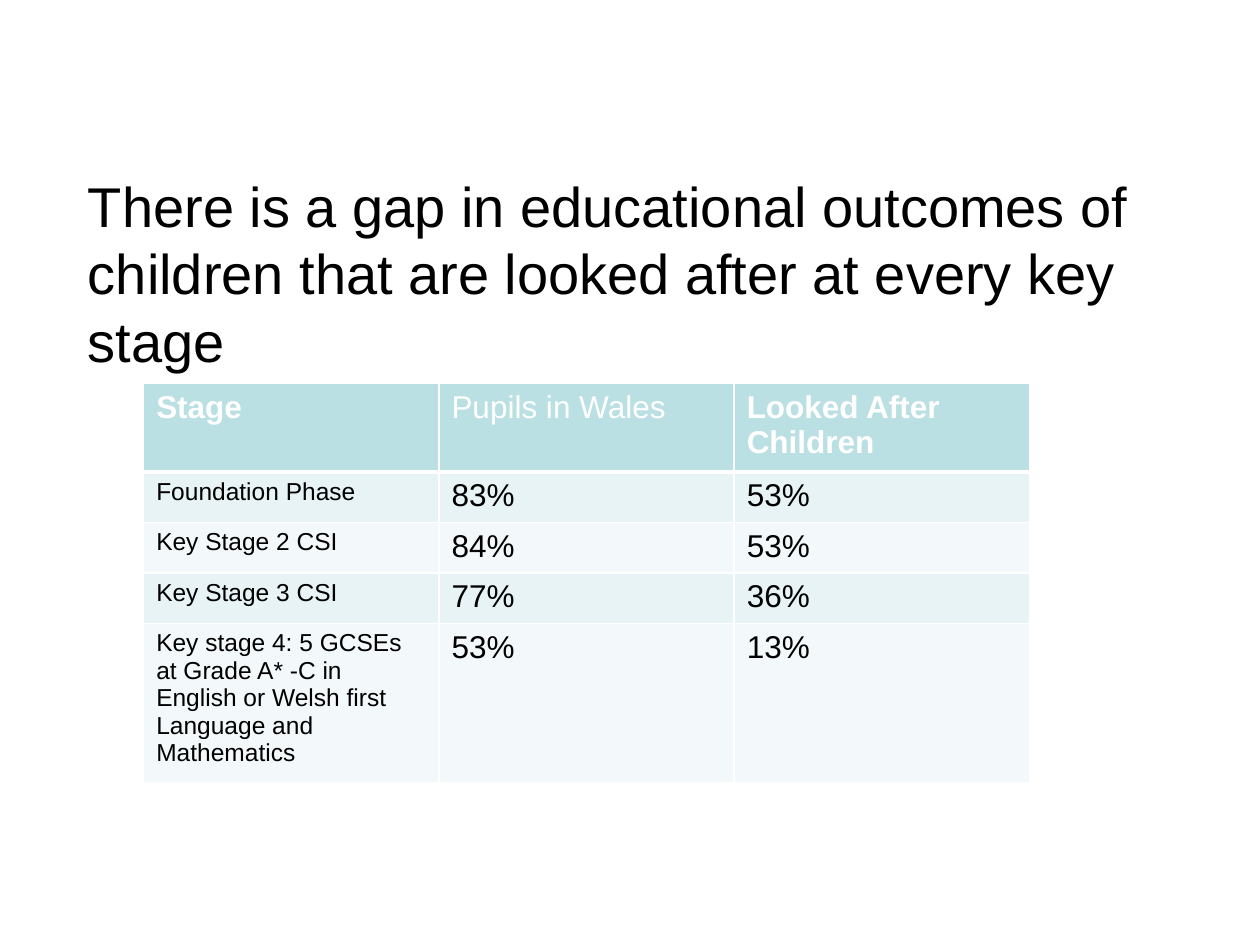
import pptx
import pptx.dml.color
import pptx.oxml.ns
import pptx.util
from lxml import etree


def color(value):
    return pptx.dml.color.RGBColor.from_string(value)


class SlideBuilder:
    font = "Arial"
    dark = "000000"
    light = "FFFFFF"
    header_fill = "BBE0E3"
    band_fills = ("E7F3F4", "F3F9FA")

    def __init__(self, presentation):
        self.width = presentation.slide_width
        self.height = presentation.slide_height
        self.slide = presentation.slides.add_slide(presentation.slide_layouts[6])

    def box(self, left, top, width, height):
        return (int(left * self.width), int(top * self.height),
                int(width * self.width), int(height * self.height))

    def set_text(self, text_frame, text, size, text_color, bold=False):
        text_frame.text = text
        text_frame.word_wrap = True
        font = text_frame.paragraphs[0].runs[0].font
        font.name = self.font
        font.size = pptx.util.Pt(size)
        font.bold = bold
        font.color.rgb = color(text_color)

    def text(self, area, text, size):
        shape = self.slide.shapes.add_textbox(*self.box(*area))
        self.set_text(shape.text_frame, text, size, self.dark)

    def border(self, cell, side, points):
        properties = cell._tc.get_or_add_tcPr()
        line = etree.SubElement(properties, pptx.oxml.ns.qn(f"a:ln{side}"),
                                w=str(pptx.util.Pt(points)))
        fill = etree.SubElement(line, pptx.oxml.ns.qn("a:solidFill"))
        etree.SubElement(fill, pptx.oxml.ns.qn("a:srgbClr"), val=self.light)

    def cell(self, cell, row, column, text):
        header = row == 0
        widths = {"L": 1, "R": 1, "T": 3 if row == 1 else 1, "B": 3 if header else 1}
        for side, points in widths.items():
            self.border(cell, side, points)
        cell.fill.solid()
        fill = self.header_fill if header else self.band_fills[(row - 1) % 2]
        cell.fill.fore_color.rgb = color(fill)
        self.set_text(cell.text_frame, text,
                      size=18 if header or column else 14,
                      text_color=self.light if header else self.dark,
                      bold=header and column != 1)

    def table(self, left, top, width, row_heights, rows):
        area = self.box(left, top, width, sum(row_heights))
        table = self.slide.shapes.add_table(len(rows), len(rows[0]), *area).table
        for row, (height, texts) in enumerate(zip(row_heights, rows)):
            table.rows[row].height = int(height * self.height)
            for column, text in enumerate(texts):
                self.cell(table.cell(row, column), row, column, text)


def main():
    presentation = pptx.Presentation()
    presentation.slide_width = pptx.util.Inches(10)
    presentation.slide_height = pptx.util.Inches(7.5)
    builder = SlideBuilder(presentation)
    builder.text(
        (0.06, 0.175, 0.9, 0.66),
        "There is a gap in educational outcomes of children that are looked after "
        "at every key stage", 32)
    builder.table(
        0.114, 0.406, 0.703, [0.087, 0.051, 0.051, 0.051, 0.159],
        [("Stage", "Pupils in Wales", "Looked After Children"),
         ("Foundation Phase", "83%", "53%"),
         ("Key Stage 2 CSI", "84%", "53%"),
         ("Key Stage 3 CSI", "77%", "36%"),
         ("Key stage 4: 5 GCSEs at Grade A* -C in English or Welsh first "
          "Language and Mathematics", "53%", "13%")])
    presentation.save("out.pptx")


if __name__ == "__main__":
    main()
